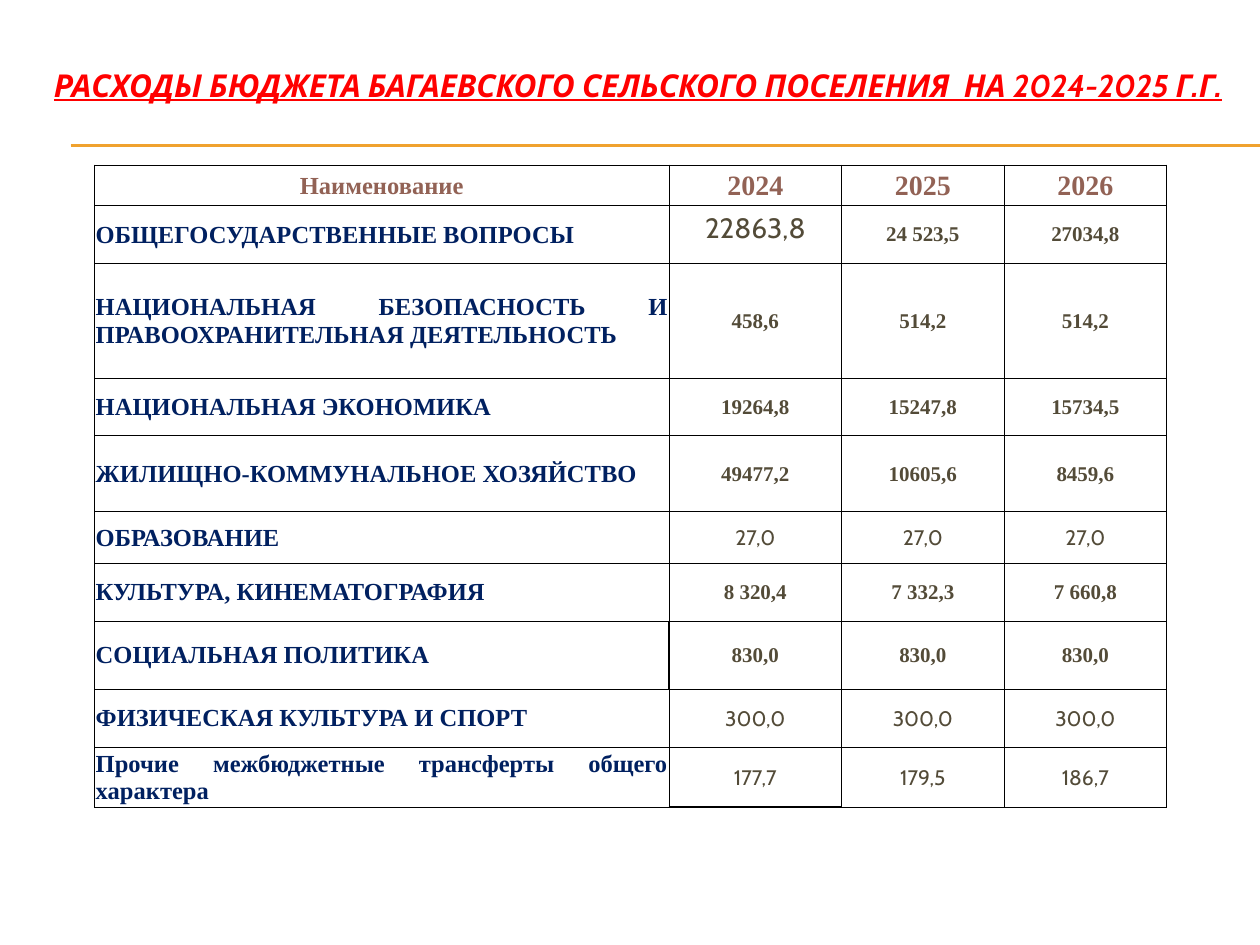
from dataclasses import dataclass

from lxml.etree import SubElement
from pptx import Presentation
from pptx.dml.color import RGBColor
from pptx.enum.shapes import MSO_CONNECTOR
from pptx.enum.text import MSO_ANCHOR as Anchor, PP_ALIGN as Align
from pptx.oxml import parse_xml
from pptx.oxml.ns import nsdecls, qn
from pptx.util import Inches, Pt

COLORS = {
    "title": "FF0000",
    "rule": "F0A22E",
    "header": "926255",
    "category": "002060",
    "value": "534B38",
    "border": "000000",
}
SERIF, SANS = "Times New Roman", "Cabin"
THIN, THICK = 0.5, 1
COLUMN_WIDTHS = (4.56, 1.37, 1.29, 1.29)


@dataclass(frozen=True)
class TextStyle:
    size: int
    color: str
    font: str = SERIF
    bold: bool = True
    italic: bool = False
    underline: bool = False


@dataclass(frozen=True)
class BudgetRow:
    category: str
    amounts: tuple[str, str, str]
    height: float = 0.46
    amount_font: str = SERIF
    category_align: Align = Align.JUSTIFY


TITLE = TextStyle(18, "title", SANS, italic=True, underline=True)
HEADER_NAME = TextStyle(14, "header")
HEADER_YEAR = TextStyle(16, "header")
CATEGORY = TextStyle(14, "category")
LARGE_AMOUNT = TextStyle(16, "value", SANS, bold=False)

YEARS = ("2024", "2025", "2026")
BUDGET = (
    BudgetRow("ОБЩЕГОСУДАРСТВЕННЫЕ ВОПРОСЫ", ("22863,8", "24 523,5", "27034,8")),
    BudgetRow("НАЦИОНАЛЬНАЯ БЕЗОПАСНОСТЬ И ПРАВООХРАНИТЕЛЬНАЯ ДЕЯТЕЛЬНОСТЬ",
              ("458,6", "514,2", "514,2"), 0.91),
    BudgetRow("НАЦИОНАЛЬНАЯ ЭКОНОМИКА", ("19264,8", "15247,8", "15734,5")),
    BudgetRow("ЖИЛИЩНО-КОММУНАЛЬНОЕ ХОЗЯЙСТВО", ("49477,2", "10605,6", "8459,6"), 0.6),
    BudgetRow("ОБРАЗОВАНИЕ", ("27,0", "27,0", "27,0"), 0.41, SANS),
    BudgetRow("КУЛЬТУРА, КИНЕМАТОГРАФИЯ", ("8 320,4", "7 332,3", "7 660,8")),
    BudgetRow("СОЦИАЛЬНАЯ ПОЛИТИКА", ("830,0", "830,0", "830,0"), 0.54,
              category_align=Align.LEFT),
    BudgetRow("ФИЗИЧЕСКАЯ КУЛЬТУРА И СПОРТ", ("300,0", "300,0", "300,0"),
              amount_font=SANS),
    BudgetRow("Прочие межбюджетные трансферты общего характера",
              ("177,7", "179,5", "186,7"), amount_font=SANS),
)
# Thicker borders by (row, column); the header is row 0.
THICK_SIDES = {(7, 0): "LR", (7, 1): "L", (9, 1): "B"}


def add_text(paragraph, text: str, style: TextStyle, align: Align) -> None:
    paragraph.alignment = align
    run = paragraph.add_run()
    run.text = text
    font = run.font
    font.name, font.size = style.font, Pt(style.size)
    font.bold, font.italic, font.underline = style.bold, style.italic, style.underline
    font.color.rgb = RGBColor.from_string(COLORS[style.color])


def add_title(slide, text: str) -> None:
    box = slide.shapes.add_textbox(Inches(0.33), Inches(0.5), Inches(9.5), Inches(0.92))
    frame = box.text_frame
    frame.word_wrap = True
    frame.vertical_anchor = Anchor.TOP
    frame.margin_top = Inches(0.02)
    frame.margin_right = 0
    add_text(frame.paragraphs[0], text, TITLE, Align.LEFT)


def add_rule(slide, y: float) -> None:
    rule = slide.shapes.add_connector(
        MSO_CONNECTOR.STRAIGHT, Inches(0.56), Inches(y), Inches(10), Inches(y))
    rule.line.color.rgb = RGBColor.from_string(COLORS["rule"])
    rule.line.width = Pt(0.75)
    SubElement(rule._element.spPr, qn("a:effectLst"))


def set_borders(cell, thick_sides: str) -> None:
    properties = cell._tc.get_or_add_tcPr()
    for position, side in enumerate("LRTB"):
        width = Pt(THICK if side in thick_sides else THIN)
        properties.insert(position, parse_xml(
            f'<a:ln{side} {nsdecls("a")} w="{width}"><a:solidFill>'
            f'<a:srgbClr val="{COLORS["border"]}"/></a:solidFill></a:ln{side}>'))


def fill_cell(cell, text: str, style: TextStyle, align: Align) -> None:
    """Write a cell; the large amount keeps the default margins and top anchor."""
    cell.fill.background()
    if style != LARGE_AMOUNT:
        cell.vertical_anchor = Anchor.MIDDLE
        cell.margin_left = cell.margin_right = cell.margin_top = Inches(0.01)
        cell.margin_bottom = 0
    add_text(cell.text_frame.paragraphs[0], text, style, align)


def add_budget_table(slide) -> None:
    heights = [0.32] + [row.height for row in BUDGET]
    table = slide.shapes.add_table(
        len(heights), len(COLUMN_WIDTHS), Inches(0.75), Inches(1.31),
        Inches(sum(COLUMN_WIDTHS)), Inches(sum(heights))).table
    table.first_row = table.horz_banding = False
    for column, width in zip(table.columns, COLUMN_WIDTHS):
        column.width = Inches(width)
    for table_row, height in zip(table.rows, heights):
        table_row.height = Inches(height)

    fill_cell(table.cell(0, 0), "Наименование", HEADER_NAME, Align.CENTER)
    for c, year in enumerate(YEARS, 1):
        fill_cell(table.cell(0, c), year, HEADER_YEAR, Align.CENTER)
    for r, row in enumerate(BUDGET, 1):
        fill_cell(table.cell(r, 0), row.category, CATEGORY, row.category_align)
        regular = TextStyle(12, "value", row.amount_font, bold=row.amount_font == SERIF)
        for c, amount in enumerate(row.amounts, 1):
            style = LARGE_AMOUNT if (r, c) == (1, 1) else regular
            fill_cell(table.cell(r, c), amount, style, Align.CENTER)

    for r in range(len(heights)):
        for c in range(len(COLUMN_WIDTHS)):
            set_borders(table.cell(r, c), THICK_SIDES.get((r, c), ""))


def main() -> None:
    deck = Presentation()
    deck.slide_width, deck.slide_height = Inches(10), Inches(7.5)
    slide = deck.slides.add_slide(deck.slide_layouts[6])
    for y in (1.15, 1.16):
        add_rule(slide, y)
    add_title(slide, "РАСХОДЫ БЮДЖЕТА БАГАЕВСКОГО СЕЛЬСКОГО ПОСЕЛЕНИЯ  НА 2024-2025 Г.Г.")
    add_budget_table(slide)
    deck.save("out.pptx")


if __name__ == "__main__":
    main()
